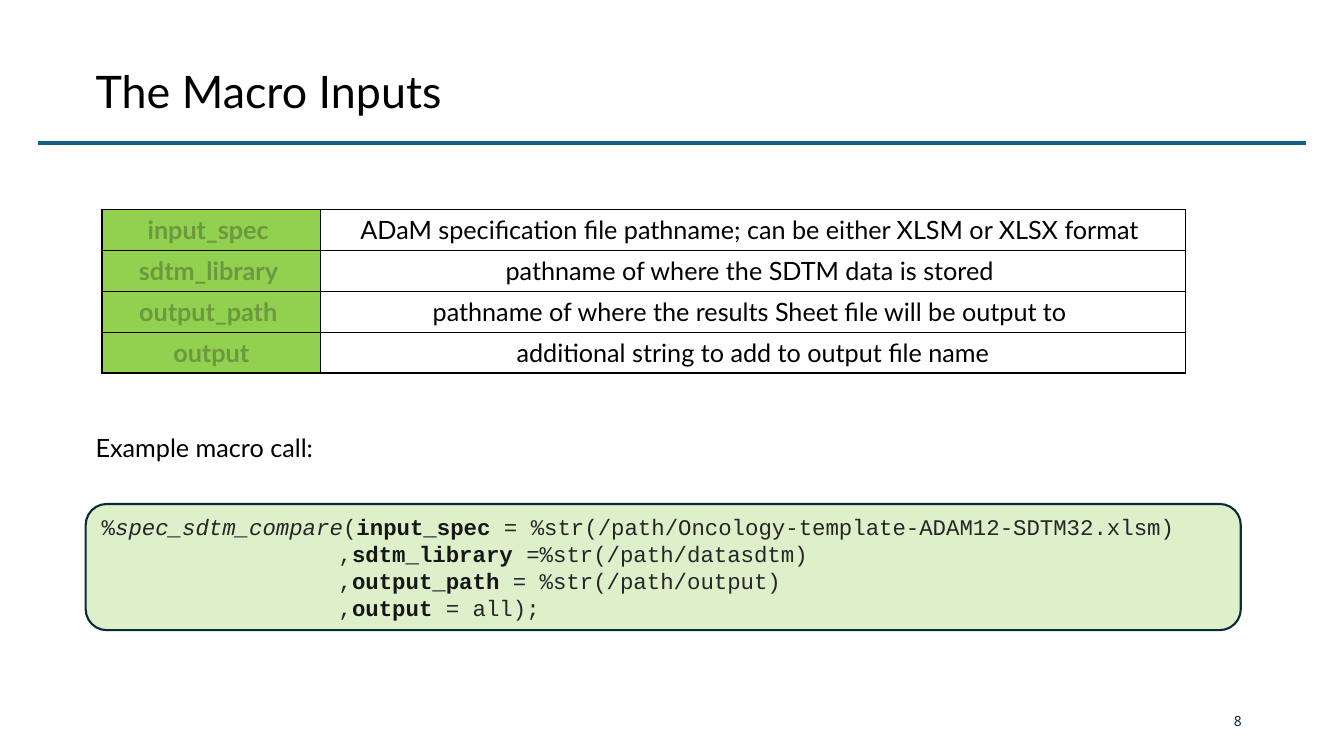
"""Build the slide that lists the macro inputs with an example call."""
from dataclasses import dataclass

from lxml import etree
from pptx import Presentation
from pptx.dml.color import RGBColor
from pptx.enum import shapes, text
from pptx.oxml import ns
from pptx.util import Cm, Pt

BLACK = RGBColor(0x00, 0x00, 0x00)
NAME_INK = RGBColor(0x17, 0x17, 0x17)
CODE_INK = RGBColor(0x26, 0x26, 0x26)
GREEN = RGBColor(0x92, 0xD0, 0x50)
NAVY = RGBColor(0x09, 0x2A, 0x39)
NUMBER_INK = RGBColor(0x0E, 0x28, 0x41)
TEAL = RGBColor(0x15, 0x60, 0x82)
LEFT = 2.16
TINT_PERCENT = 30
CODE_INDENT = 5.97


@dataclass(frozen=True)
class MacroInput:
    name: str
    description: str


@dataclass(frozen=True)
class Label:
    wording: str
    left: float
    top: float
    width: float
    height: float
    size: int
    font: str = "Lato"
    color: RGBColor = BLACK
    align: text.PP_ALIGN = text.PP_ALIGN.LEFT
    line_spacing: float = 1.0


@dataclass(frozen=True)
class CodeRun:
    wording: str
    bold: bool = False
    italic: bool = False


MACRO_INPUTS = [
    MacroInput("input_spec ", "ADaM specification file pathname; can be either XLSM or XLSX format "),
    MacroInput("sdtm_library ", "pathname of where the SDTM data is stored "),
    MacroInput("output_path ", "pathname of where the results Sheet file will be output to "),
    MacroInput("output", "additional string to add to output file name"),
]
LABELS = [
    Label("The Macro Inputs", LEFT, 0.79, 25.25, 3.18, 32, line_spacing=0.9),
    Label("Example macro call:", LEFT, 10.77, 11.43, 1.03, 18),
    Label("8", 23.93, 17.65, 7.62, 1.02, 10, "Noto Sans Mono", NUMBER_INK, text.PP_ALIGN.RIGHT),
]
CODE_LINES = [
    [CodeRun("%"), CodeRun("spec_sdtm_compare", italic=True), CodeRun("("),
     CodeRun("input_spec ", bold=True),
     CodeRun("= %str(/path/Oncology-template-ADAM12-SDTM32.xlsm)")],
    [CodeRun(","), CodeRun("sdtm_library ", bold=True), CodeRun("=%str(/path/datasdtm)")],
    [CodeRun(","), CodeRun("output_path ", bold=True), CodeRun("= %str(/path/output)")],
    [CodeRun(","), CodeRun("output", bold=True), CodeRun(" = all);")],
]


def tint(fill, element) -> None:
    """Fill with translucent green."""
    fill.solid()
    fill.fore_color.rgb = GREEN
    color = next(element.iter(ns.qn("a:srgbClr")))
    etree.SubElement(color, ns.qn("a:alpha"), val=str(TINT_PERCENT * 1000))


def add_borders(cell) -> None:
    """Draw thin black lines on all four sides of a cell."""
    properties = cell._tc.get_or_add_tcPr()
    for index, side in enumerate(("lnL", "lnR", "lnT", "lnB")):
        line = etree.Element(ns.qn(f"a:{side}"), w=str(Pt(1)))
        solid = etree.SubElement(line, ns.qn("a:solidFill"))
        etree.SubElement(solid, ns.qn("a:srgbClr"), val=str(BLACK))
        properties.insert(index, line)


def set_cell(cell, wording: str, is_name: bool) -> None:
    """Write and style one table cell."""
    cell.text = wording
    paragraph = cell.text_frame.paragraphs[0]
    paragraph.alignment = text.PP_ALIGN.CENTER
    paragraph.font.name = "Lato"
    paragraph.font.size = Pt(18)
    paragraph.font.bold = is_name
    paragraph.font.color.rgb = NAME_INK if is_name else BLACK
    if is_name:
        tint(cell.fill, cell._tc)
    else:
        cell.fill.background()
    add_borders(cell)


def add_input_table(slide, inputs: list[MacroInput]) -> None:
    """Add the table of input names and descriptions."""
    row_height = Cm(1.03)
    name_width, description_width = Cm(5.51), Cm(21.79)
    table = slide.shapes.add_table(
        len(inputs), 2, Cm(2.57), Cm(5.28),
        name_width + description_width, row_height * len(inputs)).table
    table.first_row = table.horz_banding = False
    table.columns[0].width = name_width
    table.columns[1].width = description_width
    for row, macro_input in enumerate(inputs):
        table.rows[row].height = row_height
        set_cell(table.cell(row, 0), macro_input.name, True)
        set_cell(table.cell(row, 1), macro_input.description, False)


def add_label(slide, label: Label) -> None:
    """Add one vertically centred line of text."""
    shape = slide.shapes.add_textbox(
        Cm(label.left), Cm(label.top), Cm(label.width), Cm(label.height))
    frame = shape.text_frame
    frame.word_wrap = True
    frame.vertical_anchor = text.MSO_ANCHOR.MIDDLE
    paragraph = frame.paragraphs[0]
    paragraph.text = label.wording
    paragraph.alignment = label.align
    paragraph.line_spacing = label.line_spacing
    paragraph.font.name = label.font
    paragraph.font.size = Pt(label.size)
    paragraph.font.color.rgb = label.color


def add_code_box(slide, lines: list[list[CodeRun]]) -> None:
    """Add the rounded box with the example call."""
    shape = slide.shapes.add_shape(
        shapes.MSO_SHAPE.ROUNDED_RECTANGLE, Cm(LEFT), Cm(12.7), Cm(29.11), Cm(3.18))
    shape.shadow.inherit = False
    tint(shape.fill, shape._element.spPr)
    shape.line.color.rgb = NAVY
    shape.line.width = Pt(1.5)
    frame = shape.text_frame
    frame.word_wrap = True
    frame.vertical_anchor = text.MSO_ANCHOR.MIDDLE
    for index, line in enumerate(lines):
        paragraph = frame.add_paragraph() if index else frame.paragraphs[0]
        paragraph.alignment = text.PP_ALIGN.LEFT
        paragraph.font.name = "Courier New"
        paragraph.font.size = Pt(16)
        if index:
            paragraph._p.get_or_add_pPr().set("marL", str(Cm(CODE_INDENT)))
        for code_run in line:
            run = paragraph.add_run()
            run.text = code_run.wording
            run.font.bold = code_run.bold
            run.font.italic = code_run.italic
            run.font.color.rgb = NAME_INK if code_run.bold else CODE_INK


def add_title_rule(slide) -> None:
    """Add the line under the title."""
    rule = slide.shapes.add_connector(
        shapes.MSO_CONNECTOR.STRAIGHT, Cm(0.97), Cm(3.61), Cm(32.92), Cm(3.61))
    rule.line.color.rgb = TEAL
    rule.line.width = Pt(3)
    etree.SubElement(rule._element.spPr, ns.qn("a:effectLst"))


def main() -> None:
    """Build and save the presentation."""
    presentation = Presentation()
    presentation.slide_width, presentation.slide_height = Cm(33.87), Cm(19.05)
    slide = presentation.slides.add_slide(presentation.slide_layouts[6])
    add_code_box(slide, CODE_LINES)
    for label in LABELS:
        add_label(slide, label)
    add_input_table(slide, MACRO_INPUTS)
    add_title_rule(slide)
    presentation.save("out.pptx")


if __name__ == "__main__":
    main()
